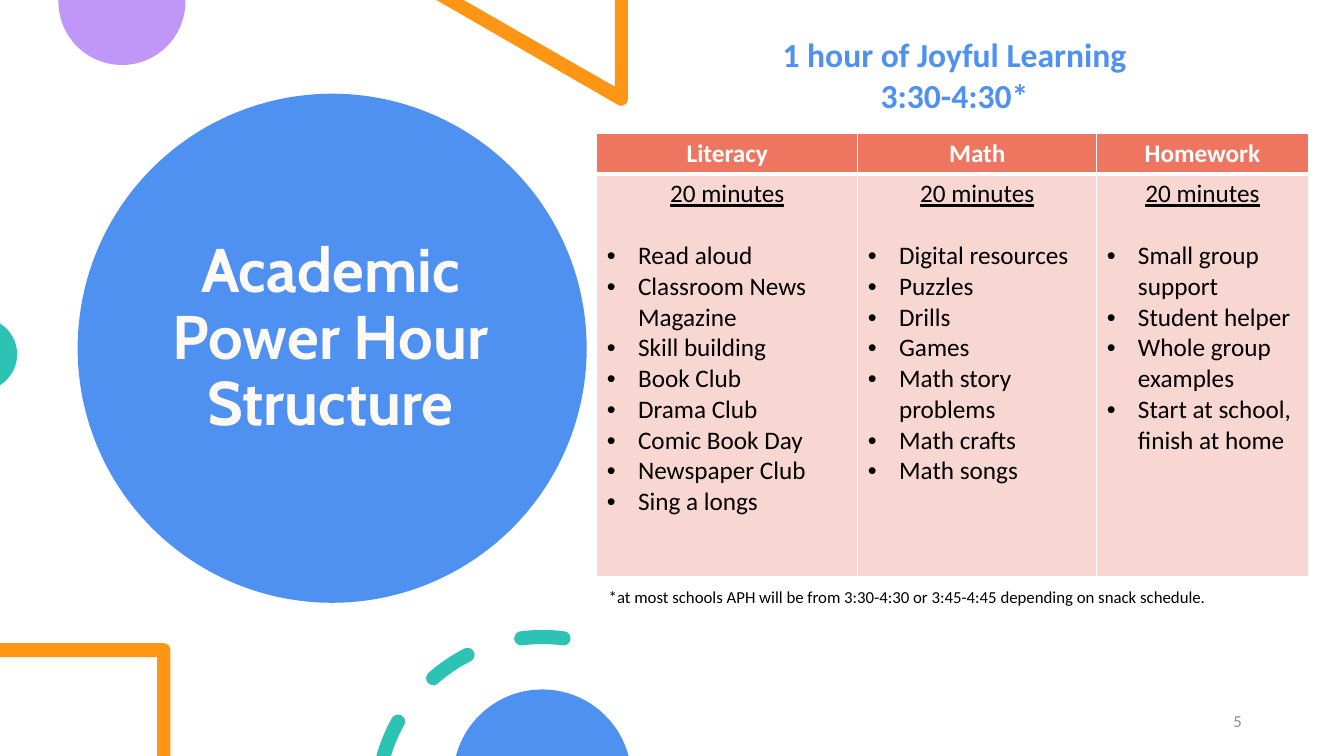
from dataclasses import dataclass
from math import ceil, cos, radians, sin, tan
from typing import Any, NamedTuple

from lxml.etree import SubElement
from pptx import Presentation
from pptx.dml.color import RGBColor
from pptx.enum.shapes import MSO_SHAPE
from pptx.enum.text import MSO_ANCHOR, MSO_AUTO_SIZE, PP_ALIGN
from pptx.oxml.ns import qn
from pptx.util import Emu, Inches, Pt

# Grid of square cells, a tenth of an inch each
CELL = Inches(0.1)
COLUMNS, ROWS = 133.33, 75
VERTEX_STEPS = 100


def grid(cells: float) -> Emu:
    return Emu(round(cells * CELL))


@dataclass(frozen=True)
class Theme:
    blue: str = "4E91F0"
    purple: str = "C097F8"
    orange: str = "FF9514"
    teal: str = "2CC3B4"
    coral: str = "EE7661"
    blush: str = "F8D6D2"
    cream: str = "FFF9F5"
    white: str = "FFFFFF"
    black: str = "000000"
    grey: str = "8C8C8C"
    title_font: str = "Cabin"
    body_font: str = "Calibri"
    title_size: int = 44
    heading_size: int = 24
    table_size: int = 18
    small_size: int = 12


THEME = Theme()


class Box(NamedTuple):
    left: float
    top: float
    width: float
    height: float

    def lengths(self) -> list[Emu]:
        return [grid(cells) for cells in self]


class Vertex(NamedTuple):
    x: float
    y: float
    starts_curve: bool = False


class Decoration(NamedTuple):
    color: str
    outlines: list[list[Vertex]]


class TextBlock(NamedTuple):
    box: Box
    lines: list[str]
    format: dict[str, Any]
    alignment: PP_ALIGN
    anchor: MSO_ANCHOR = MSO_ANCHOR.TOP


class Subject(NamedTuple):
    name: str
    columns: float
    activities: list[str]


def text_format(size: int, color: str, name: str = THEME.body_font, **extra: Any) -> dict[str, Any]:
    return {"name": name, "size": Pt(size), "color": color, **extra}


def corners(*points: tuple[float, float]) -> list[Vertex]:
    return [Vertex(*point) for point in points]


def arc(x: float, y: float, radius: float, start: float, end: float) -> list[Vertex]:
    """Bezier arc; angles in degrees, counterclockwise from the right."""
    pieces = ceil(abs(end - start) / 90)
    step = radians(end - start) / pieces
    handle = radius * 4 / 3 * tan(step / 4)
    vertices = corners((x + radius * cos(radians(start)), y - radius * sin(radians(start))))
    for piece in range(pieces):
        first = radians(start) + piece * step
        last = first + step
        end_x, end_y = x + radius * cos(last), y - radius * sin(last)
        vertices += [Vertex(vertices[-1].x - handle * sin(first), vertices[-1].y - handle * cos(first), True),
                     Vertex(end_x + handle * sin(last), end_y + handle * cos(last)),
                     Vertex(end_x, end_y)]
    return vertices


# Dashed ring at the bottom
RING_X, RING_Y, RING_RADIUS, DASH_HALF = 53.8, 79.6, 16.4, 0.7


def dash_cap(angle: float, start: float) -> list[Vertex]:
    x = RING_X + RING_RADIUS * cos(radians(angle))
    y = RING_Y - RING_RADIUS * sin(radians(angle))
    return arc(x, y, DASH_HALF, start, start + 180)[1:]


def dash(start: float, outer_end: float, inner_end: float, rounded: bool = True) -> list[Vertex]:
    end_cap = dash_cap(outer_end, outer_end)[:-1] if rounded else []
    inner = arc(RING_X, RING_Y, RING_RADIUS - DASH_HALF, inner_end, start)
    return [*arc(RING_X, RING_Y, RING_RADIUS + DASH_HALF, start, outer_end),
            *end_cap, *inner, *dash_cap(start, start + 180)]


DECORATIONS = [
    Decoration(THEME.purple, [[*corners((18.4, 0), (5.8, 0)), *arc(12.1, 0.15, 6.3, 180, 360)]]),
    Decoration(THEME.orange, [[*corners((62.3, 0), (61, 0), (61, 8.6), (46, 0), (43.3, 0), (61.3, 10.4)),
                               *arc(61.6, 9.8, 0.7, 270, 360)]]),
    Decoration(THEME.teal, [arc(-1.9, 35.15, 3.6, 58, -58)]),
    Decoration(THEME.orange, [[*corners((0, 63.8)), *arc(16.2, 64.5, 0.7, 90, 0),
                               *corners((16.9, ROWS), (15.6, ROWS), (15.6, 65.2), (0, 65.2))]]),
    Decoration(THEME.teal, [dash(150.8, 164.4, 163, False), dash(116.9, 131.3, 131.3),
                            dash(82.65, 97.35, 97.35)]),
    Decoration(THEME.blue, [arc(53.8, 77.25, 8.85, 165.3, 14.7)]),
]

TITLE = TextBlock(Box(15.1, 11.4, 35.4, 44.5), ["Academic Power Hour Structure"],
                  text_format(THEME.title_size, THEME.cream, THEME.title_font, bold=True),
                  PP_ALIGN.CENTER, MSO_ANCHOR.MIDDLE)
TEXT_BLOCKS = [
    TextBlock(Box(114.9, 69.5, 9.3, 4), ["5"], text_format(THEME.small_size, THEME.grey),
              PP_ALIGN.RIGHT, MSO_ANCHOR.MIDDLE),
    TextBlock(Box(70.1, 2.9, 49.2, 12.1), ["1 hour of Joyful Learning", "3:30-4:30*"],
              text_format(THEME.heading_size, THEME.blue, bold=True), PP_ALIGN.CENTER),
    TextBlock(Box(59.4, 57.7, 69.5, 3),
              ["*at most schools APH will be from 3:30-4:30 or 3:45-4:45 depending on snack schedule."],
              text_format(THEME.small_size, THEME.black), PP_ALIGN.LEFT),
]

TABLE_BOX = Box(59.2, 13.2, 70.6, 43.9)
HEADER_HEIGHT = 3.97
DURATION = "20 minutes"
SUBJECTS = [
    Subject("Literacy", 25.9, ["Read aloud", "Classroom News Magazine", "Skill building", "Book Club",
                               "Drama Club", "Comic Book Day", "Newspaper Club", "Sing a longs"]),
    Subject("Math", 23.7, ["Digital resources", "Puzzles", "Drills", "Games", "Math story problems",
                           "Math crafts", "Math songs"]),
    Subject("Homework", 21, ["Small group support", "Student helper", "Whole group examples",
                             "Start at school, finish at home"]),
]


def set_fill(target: Any, color: str) -> None:
    target.fill.solid()
    target.fill.fore_color.rgb = RGBColor.from_string(color)


def paint(shape: Any, color: str) -> None:
    shape.shadow.inherit = False
    set_fill(shape, color)
    shape.line.fill.background()


def write(paragraph: Any, text: str, values: dict[str, Any], alignment: PP_ALIGN) -> None:
    paragraph.alignment = alignment
    run = paragraph.add_run()
    run.text = text
    for name, value in values.items():
        if name == "color":
            run.font.color.rgb = RGBColor.from_string(value)
        else:
            setattr(run.font, name, value)


def draw_decoration(slide: Any, decoration: Decoration) -> None:
    outlines = [[(vertex.x * VERTEX_STEPS, vertex.y * VERTEX_STEPS) for vertex in outline]
                for outline in decoration.outlines]
    builder = slide.shapes.build_freeform(*outlines[0][0], scale=CELL / VERTEX_STEPS)
    for number, outline in enumerate(outlines):
        if number:
            builder.move_to(*outline[0])
        builder.add_line_segments(outline[1:], close=True)
    shape = builder.convert_to_shape()
    paint(shape, decoration.color)

    # Join each curve's two handles and end point into one Bezier segment
    segments = list(shape.element.iter(qn("a:moveTo"), qn("a:lnTo")))
    vertices = [vertex for outline in decoration.outlines for vertex in outline]
    for index, vertex in enumerate(vertices):
        if vertex.starts_curve:
            curve = segments[index].makeelement(qn("a:cubicBezTo"))
            segments[index].addprevious(curve)
            for segment in segments[index:index + 3]:
                curve.append(segment[0])
                segment.getparent().remove(segment)


def fill_text(shape: Any, block: TextBlock) -> None:
    frame = shape.text_frame
    settings = {"word_wrap": True, "auto_size": MSO_AUTO_SIZE.NONE, "vertical_anchor": block.anchor}
    for name, value in settings.items():
        setattr(frame, name, value)
    for number, line in enumerate(block.lines):
        paragraph = frame.add_paragraph() if number else frame.paragraphs[0]
        write(paragraph, line, block.format, block.alignment)


def style_cell(cell: Any, color: str, bottom: int) -> None:
    properties = cell._tc.get_or_add_tcPr()
    for side, width in {"L": 1, "R": 1, "T": 1, "B": bottom}.items():
        border = SubElement(properties, qn(f"a:ln{side}"), w=str(Pt(width)))
        SubElement(SubElement(border, qn("a:solidFill")), qn("a:srgbClr"), val=THEME.white)
    set_fill(cell, color)


def add_bullet(paragraph: Any) -> None:
    properties = paragraph._p.get_or_add_pPr()
    indent = grid(3.1)
    properties.set("marL", str(indent))
    properties.set("indent", str(-indent))
    SubElement(properties, qn("a:buFont"), typeface="Arial")
    SubElement(properties, qn("a:buChar"), char="•")


def draw_schedule(slide: Any) -> None:
    table = slide.shapes.add_table(2, len(SUBJECTS), *TABLE_BOX.lengths()).table
    table.rows[0].height = grid(HEADER_HEIGHT)
    table.rows[1].height = grid(TABLE_BOX.height - HEADER_HEIGHT)
    header_format = text_format(THEME.table_size, THEME.white, bold=True)
    body_format = text_format(THEME.table_size, THEME.black, bold=False)
    for number, subject in enumerate(SUBJECTS):
        table.columns[number].width = grid(subject.columns)
        header, body = table.cell(0, number), table.cell(1, number)
        style_cell(header, THEME.coral, 3)
        style_cell(body, THEME.blush, 1)
        write(header.text_frame.paragraphs[0], subject.name, header_format, PP_ALIGN.CENTER)
        duration = body.text_frame.paragraphs[0]
        write(duration, DURATION, {**body_format, "underline": True}, PP_ALIGN.CENTER)
        duration.space_after = Pt(22)
        for activity in subject.activities:
            paragraph = body.text_frame.add_paragraph()
            add_bullet(paragraph)
            write(paragraph, activity, body_format, PP_ALIGN.LEFT)


def main() -> None:
    presentation = Presentation()
    presentation.slide_width, presentation.slide_height = grid(COLUMNS), grid(ROWS)
    slide = presentation.slides.add_slide(presentation.slide_layouts[5])

    # Background shapes
    circle = slide.shapes.add_shape(MSO_SHAPE.OVAL, *Box(7.7, 9.3, 50.5, 50.5).lengths())
    paint(circle, THEME.blue)
    for decoration in DECORATIONS:
        draw_decoration(slide, decoration)

    # Title, raised above the circle
    title = slide.shapes.title
    title.left, title.top, title.width, title.height = TITLE.box.lengths()
    fill_text(title, TITLE)
    title.text_frame.paragraphs[0].line_spacing = 0.9
    title.element.getparent().append(title.element)

    # Heading, footnote, page number and schedule
    for block in TEXT_BLOCKS:
        fill_text(slide.shapes.add_textbox(*block.box.lengths()), block)
    draw_schedule(slide)
    presentation.save("out.pptx")


if __name__ == "__main__":
    main()
